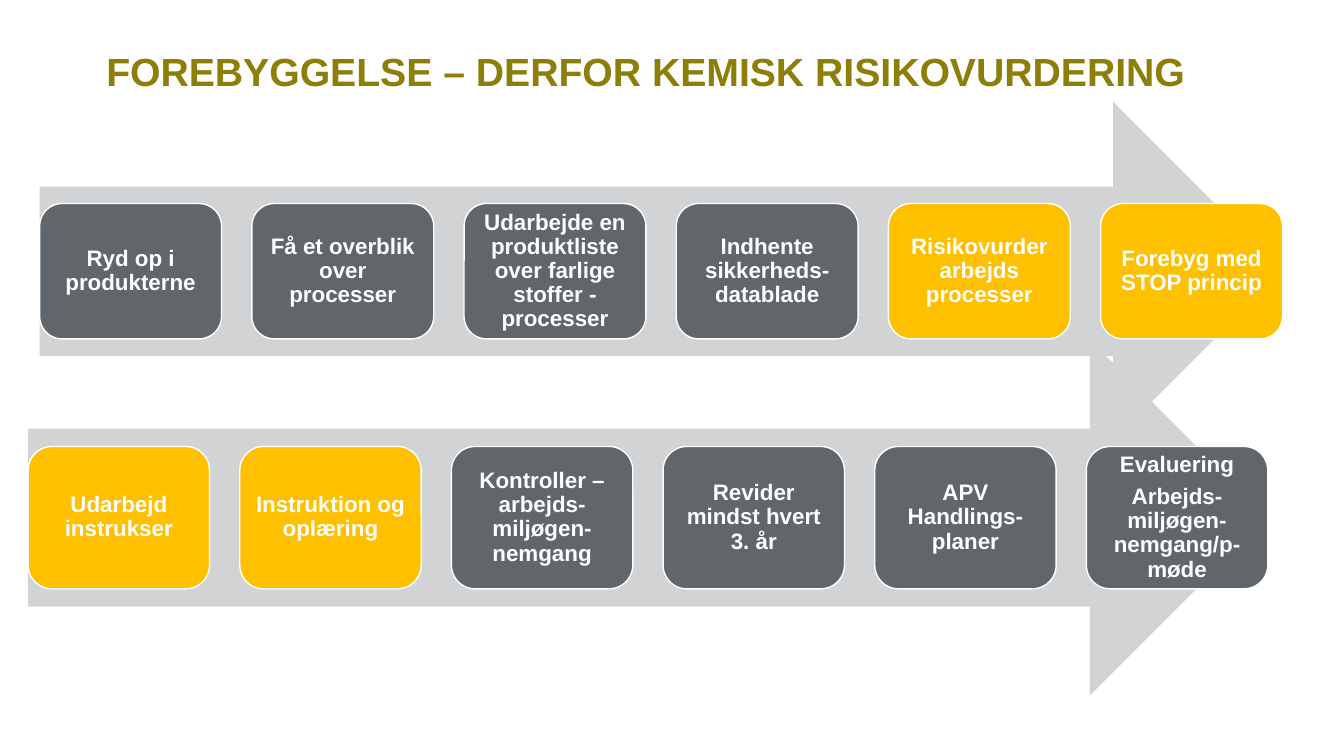
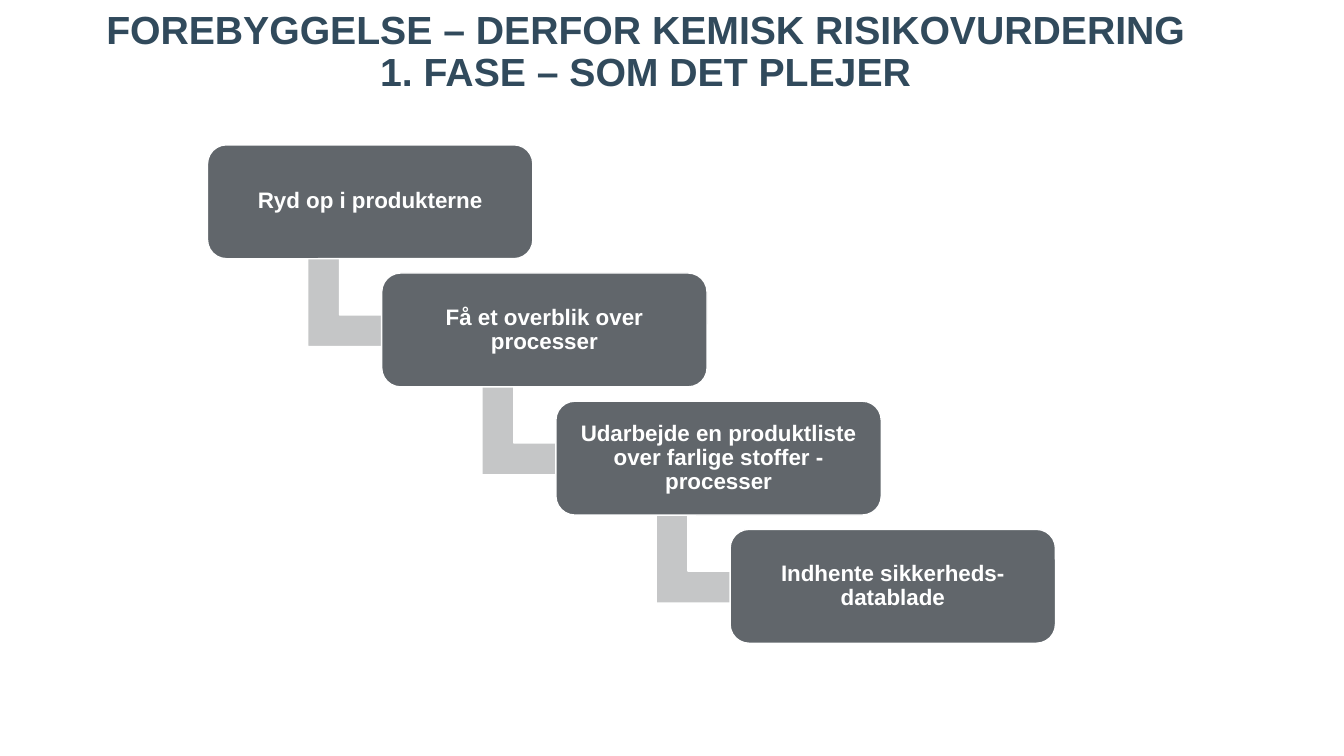
from pptx import Presentation
from pptx.dml.color import RGBColor
from pptx.enum.shapes import MSO_SHAPE as Shape
from pptx.enum.text import MSO_ANCHOR as Anchor, PP_ALIGN as Align
from pptx.util import Cm, Pt

FONT = "Arial"
COLORS = {
    "white": "FFFFFF",
    "gray": "61666B",
    "yellow": "FFC000",
    "band": "D2D3D4",
    "elbow": "C5C6C7",
    "olive": "8C7E06",
    "navy": "314A5C",
}
HEADING = "FOREBYGGELSE – DERFOR KEMISK RISIKOVURDERING"
FIRST_PHASE = [
    "Ryd op i produkterne",
    "Få et overblik over processer",
    "Udarbejde en produktliste over farlige stoffer - processer",
    "Indhente sikkerheds-datablade",
]
UPPER_ROW = [(text, "gray") for text in FIRST_PHASE] + [
    ("Risikovurder arbejds processer", "yellow"),
    ("Forebyg med STOP princip", "yellow"),
]
LOWER_ROW = [
    ("Udarbejd instrukser", "yellow"),
    ("Instruktion og oplæring", "yellow"),
    ("Kontroller – arbejds-miljøgen-nemgang", "gray"),
    ("Revider mindst hvert 3. år", "gray"),
    ("APV Handlings-planer", "gray"),
    ("Evaluering\nArbejds-miljøgen-nemgang/p-møde", "gray"),
]


def color(name):
    return RGBColor.from_string(COLORS[name])


def write(frame, text, size, ink, anchor, margins, gap=0):
    """Fill a text frame with centred bold paragraphs, one per line of text."""
    frame.word_wrap = True
    frame.vertical_anchor = anchor
    left, top, right, bottom = margins
    frame.margin_left, frame.margin_top = Cm(left), Cm(top)
    frame.margin_right, frame.margin_bottom = Cm(right), Cm(bottom)
    for index, line in enumerate(text.split("\n")):
        para = frame.add_paragraph() if index else frame.paragraphs[0]
        para.text = line
        para.alignment = Align.CENTER
        para.line_spacing = 0.9
        para.space_before = Pt(gap if index else 0)
        para.font.name = FONT
        para.font.size = Pt(size)
        para.font.bold = True
        para.font.color.rgb = color(ink)


def add_title(page, text, ink):
    box = page.shapes.add_textbox(Cm(1.96), Cm(0.15), Cm(28.32), Cm(2.44))
    write(box.text_frame, text, 28, ink, Anchor.BOTTOM, (0.5, 0.2, 0.2, 0.2))


def add_figure(page, kind, left, top, width, height, fill, outlined=True):
    figure = page.shapes.add_shape(kind, Cm(left), Cm(top), Cm(width), Cm(height))
    figure.shadow.inherit = False
    figure.fill.solid()
    figure.fill.fore_color.rgb = color(fill)
    if outlined:
        figure.line.color.rgb = color("white")
        figure.line.width = Pt(1)
    else:
        figure.line.fill.background()
    return figure


def add_step(page, text, left, top, width, height, fill):
    box = add_figure(page, Shape.ROUNDED_RECTANGLE, left, top, width, height, fill)
    write(box.text_frame, text, 16, "white", Anchor.MIDDLE, (0.17,) * 4, gap=5.6)


def add_process(page, steps, left, top, width, height):
    """Wide arrow with equal boxes; each gap is a sixth of a box."""
    add_figure(page, Shape.RIGHT_ARROW, left, top, width, height, "band", outlined=False)
    box_width = width / (len(steps) + (len(steps) - 1) / 6)
    for index, (text, fill) in enumerate(steps):
        add_step(page, text, left + index * box_width * 7 / 6, top + 0.3 * height,
                 box_width, 0.4 * height, fill)


def add_staircase(page, steps, left, top):
    """Boxes stepping down to the right, joined by bent arrows."""
    for index, text in enumerate(steps):
        x, y = left + index * 4.39, top + index * 3.23
        if index < len(steps) - 1:
            elbow = add_figure(page, Shape.BENT_UP_ARROW, x + 2.69, y + 2.69,
                               2.44, 2.77, "elbow")
            elbow.rotation = 90
            for number, value in enumerate((0.328, 0.25, 0.358)):
                elbow.adjustments[number] = value
        add_step(page, text, x, y, 8.2, 2.87, "gray")


def main():
    deck = Presentation()
    deck.slide_width, deck.slide_height = Cm(33.87), Cm(19.05)
    blank = deck.slide_layouts[6]

    # Whole process in two rows
    page = deck.slides.add_slide(blank)
    add_process(page, LOWER_ROW, 0.71, 8.56, 31.24, 8.97)
    add_title(page, HEADING, "olive")
    add_process(page, UPPER_ROW, 1, 2.57, 31.32, 8.53)

    # First phase
    page = deck.slides.add_slide(blank)
    add_title(page, HEADING + "\n1. FASE – SOM DET PLEJER", "navy")
    add_staircase(page, FIRST_PHASE, 5.23, 3.65)

    deck.save("out.pptx")


if __name__ == "__main__":
    main()
